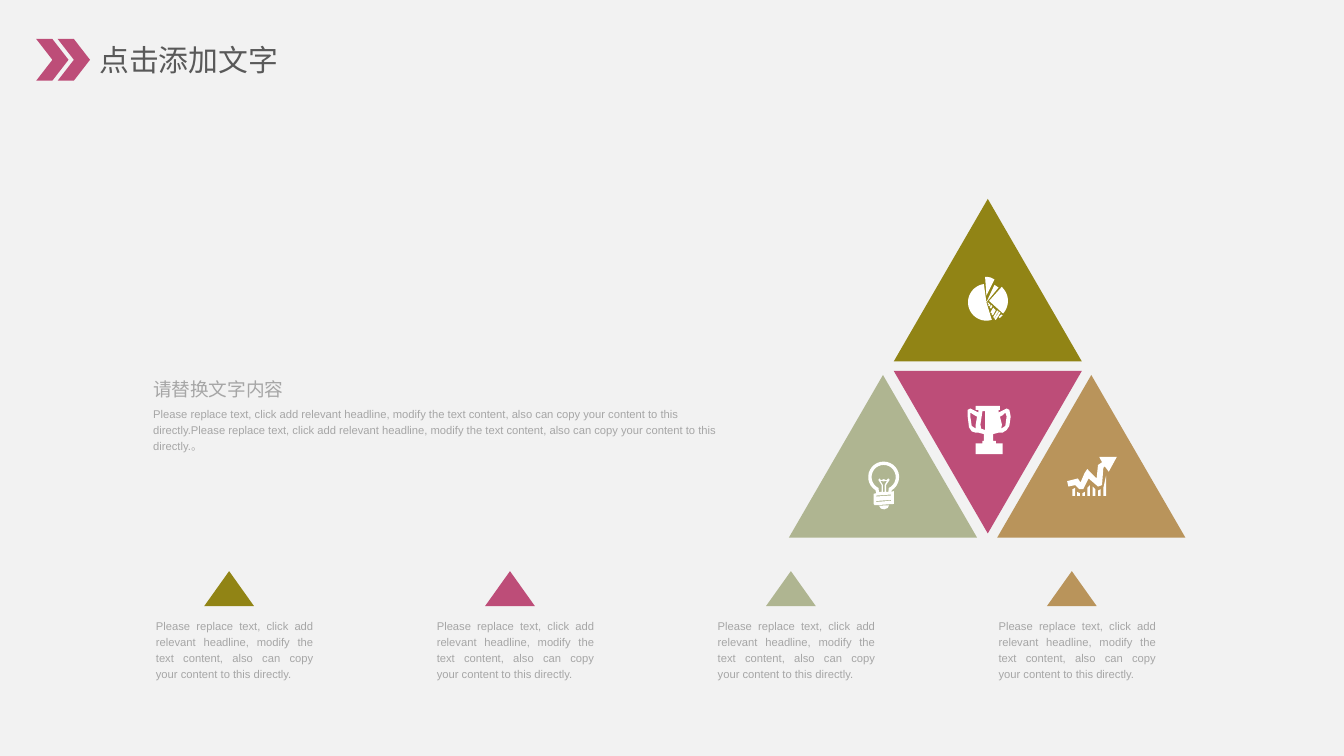
from math import cos, radians, sin

from lxml import etree
from pptx import Presentation
from pptx.dml.color import RGBColor
from pptx.enum.shapes import MSO_SHAPE
from pptx.enum.text import MSO_ANCHOR, MSO_AUTO_SIZE, PP_ALIGN
from pptx.oxml.ns import qn
from pptx.util import Inches, Pt

TRIANGLE, CHEVRON = MSO_SHAPE.ISOSCELES_TRIANGLE, MSO_SHAPE.CHEVRON
LEFT, JUSTIFY = PP_ALIGN.LEFT, PP_ALIGN.JUSTIFY
TOP, GROW = MSO_ANCHOR.TOP, MSO_AUTO_SIZE.SHAPE_TO_FIT_TEXT
COLORS = {
    "back": "F2F2F2", "title": "595959", "body": "A6A6A6", "icon": "FFFFFF",
    "olive": "918415", "pink": "BD4D78", "sage": "AFB591", "tan": "B9945B",
}
RGB = {name: RGBColor.from_string(code) for name, code in COLORS.items()}
CJK = "Noto Sans CJK SC"
BODY = ("Please replace text, click add relevant headline, modify the text "
        "content, also can copy your content to this directly.")


def arc(x, y, r, start, end):
    """Points along a circle, angles in degrees clockwise from the right."""
    turns = [radians(start + (end - start) * i / 24) for i in range(25)]
    return [(x + r * cos(t), y + r * sin(t)) for t in turns]


def write(box, text, size, font, color, align=LEFT, space=None, wrap=True):
    frame = box.text_frame
    frame.word_wrap = wrap
    frame.auto_size = GROW
    frame.vertical_anchor = TOP
    frame.margin_left = frame.margin_right = Inches(0.07)
    frame.margin_top = frame.margin_bottom = Inches(0.04)
    para = frame.paragraphs[0]
    para.alignment = align
    para.line_spacing = space
    run = para.add_run()
    run.text = text
    run.font.size = Pt(size)
    run.font.name = font
    run.font.color.rgb = RGB[color]
    if font == CJK:
        east = etree.SubElement(run._r.get_or_add_rPr(), qn("a:ea"))
        east.set("typeface", font)


prs = Presentation()
prs.slide_width, prs.slide_height = Inches(10), Inches(10) * 9 // 16
slide = prs.slides.add_slide(prs.slide_layouts[5])
slide.background.fill.solid()
slide.background.fill.fore_color.rgb = RGB["back"]

# Heading
title = slide.shapes.title
title.left, title.top = Inches(0.67), Inches(0.27)
title.width, title.height = Inches(1.96), Inches(0.34)
write(title, "点击添加文字", 16, CJK, "title")
for x in (0.27, 0.43):
    mark = slide.shapes.add_shape(
        CHEVRON, Inches(x), Inches(0.29), Inches(0.24), Inches(0.31))
    mark.shadow.inherit = False
    mark.fill.solid()
    mark.fill.fore_color.rgb = RGB["pink"]
    mark.line.fill.background()

# Icon outlines, in hundredths of an inch on the slide; inner outlines are holes
cup = [
    [(728, 305), (728, 307), (722, 304), (720, 305), (720, 310), (721, 318),
     (723, 321), (726, 322), (728, 322), (732, 323), (732, 328), (731, 328),
     (731, 330), (726, 330), (726, 338), (746, 338), (746, 330), (741, 330),
     (741, 328), (739, 328), (739, 323), (743, 322), (746, 322), (749, 320),
     (751, 317), (752, 310), (751, 305), (749, 304), (743, 307), (743, 305),
     (744, 305), (744, 302), (726, 302), (726, 305)],
    [(745, 319), (745.5, 316), (744, 310), (746, 309), (748, 307), (749, 310),
     (748, 317)],
    [(727, 310), (726, 316), (726, 319), (723, 317), (722, 310), (722, 307),
     (725, 309)],
    [(733, 306), (733, 320), (730, 319), (729.5, 316), (731, 306)],
]
pie = [
    arc(734, 225, 13.7, 73, 262) + [(734, 225)],
    arc(736, 224, 14, -48, 42) + [(736, 224)],
    [(734, 206), (733, 206), (734, 220), (740, 208), (737, 206.5)],
    [(740, 212), (734, 225), (743, 214)],
]
pie += [[(x, y), (x + 1, y + 0.8), (x + 1 - run, y + 0.8 + fall),
         (x - run, y + fall)]
        for x, y, run, fall in (
            (735, 225, 0.3, 0.6), (736, 226, 0.7, 1.3), (737.5, 227, 1, 2),
            (739, 229, 2, 3.5), (740, 230, 2.2, 4), (742, 231, 3, 5),
            (743.5, 232, 3.5, 5.4), (745, 234, 2, 2))]
trend = [
    [(831, 340), (825, 351), (822, 347), (821, 348), (820, 361), (817, 362),
     (810, 356), (806, 364), (803, 364), (800, 361), (795, 362), (794, 358),
     (802, 356), (804, 359), (807, 352), (809, 349), (816, 356), (817, 346),
     (820, 344), (818, 340)],
]
trend += [[(x, 369), (x, a), (x + 2, b), (x + 2, 369)]
          for x, a, b in ((798, 364, 363), (801.5, 366, 367),
                          (805.3, 367, 366), (809, 363, 361),
                          (813, 362, 364), (817, 365, 364),
                          (821, 363, 354))]
bulb = [
    arc(657.5, 355, 11.5, 122, 418) + [
        (663, 366), (665, 365.5), (665, 375), (651, 376), (650, 375),
        (650, 367.5), (652, 367)],
    arc(657.5, 355, 9, 115, 425) + [
        (661, 366), (659.3, 366), (659.3, 361), (662, 357), (661, 356),
        (659.5, 357.5), (657.5, 356.5), (655.5, 357.5), (654.5, 356),
        (653.5, 357), (656, 361), (656, 366), (654, 366)],
    [(655, 357.7), (657, 361), (657, 366), (658.2, 366), (658.2, 361),
     (660, 357.7), (657.5, 358.2)],
    [(661.5, 376), (654, 376.3), (655.5, 378.5), (658, 379), (660.5, 378)],
] + [[(663, y), (652, y + 0.8), (652, y + 1.5), (663, y + 0.7)]
     for y in (368, 372)]

# Pyramid of four triangles, each with its icon
for x, y, color, icon in ((6.65, 2.76, "pink", cup), (6.65, 1.48, "olive", pie),
                          (7.42, 2.79, "tan", trend), (5.87, 2.79, "sage", bulb)):
    group = slide.shapes.add_group_shape()
    tile = group.shapes.add_shape(
        TRIANGLE, Inches(x), Inches(y), Inches(1.4), Inches(1.21))
    if icon is cup:
        tile._element.spPr.xfrm.set("flipV", "1")
    rings = [[(Inches(a / 100), Inches(b / 100)) for a, b in ring]
             for ring in icon]
    pen = group.shapes.build_freeform(*rings[0][0])
    pen.add_line_segments(rings[0][1:])
    for ring in rings[1:]:
        pen.move_to(*ring[0])
        pen.add_line_segments(ring[1:])
    for shape, fill in ((tile, color), (pen.convert_to_shape(), "icon")):
        shape.shadow.inherit = False
        shape.fill.solid()
        shape.fill.fore_color.rgb = RGB[fill]
        shape.line.fill.background()

# Row of captions
for i, color in enumerate(("olive", "pink", "sage", "tan")):
    step = 2.09 * i
    mark = slide.shapes.add_shape(
        TRIANGLE, Inches(1.52 + step), Inches(4.25), Inches(0.37), Inches(0.26))
    mark.shadow.inherit = False
    mark.fill.solid()
    mark.fill.fore_color.rgb = RGB[color]
    mark.line.fill.background()
    box = slide.shapes.add_textbox(
        Inches(1.09 + step), Inches(4.55), Inches(1.31), Inches(0.56))
    write(box, BODY, 6, "Arial", "body", JUSTIFY, 1.2)

# Text beside the pyramid
box = slide.shapes.add_textbox(
    Inches(1.07), Inches(2.74), Inches(1.13), Inches(0.27))
write(box, "请替换文字内容", 10, "Arial", "body", space=1.2, wrap=False)
box = slide.shapes.add_textbox(
    Inches(1.07), Inches(2.97), Inches(4.35), Inches(0.44))
write(box, BODY * 2 + "。", 6, "Arial", "body", space=1.2)

prs.save("out.pptx")
